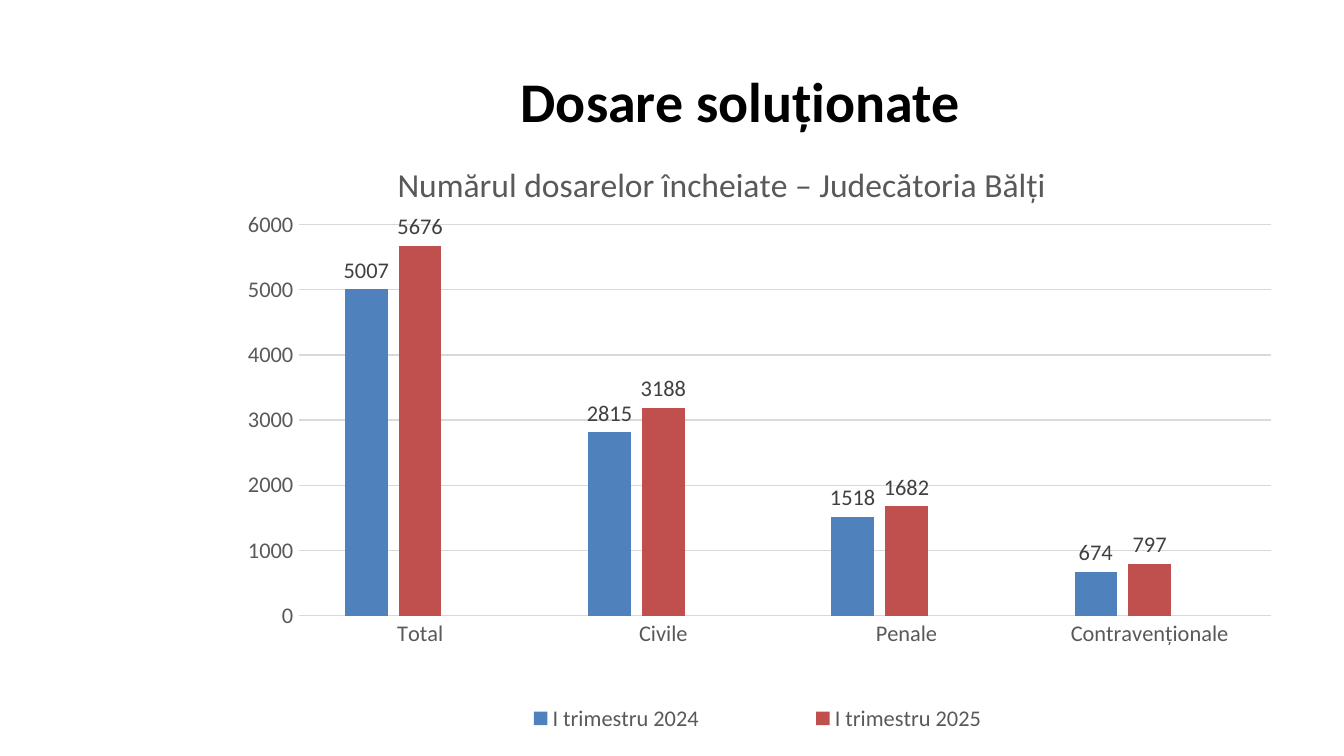
import pptx
import pptx.chart.data
import pptx.dml.color
import pptx.enum.chart
import pptx.enum.text
import pptx.oxml
import pptx.oxml.ns
import pptx.util

Pt = pptx.util.Pt
RGB = pptx.dml.color.RGBColor.from_string
enum = pptx.enum.chart
qn = pptx.oxml.ns.qn
space = pptx.oxml.ns.nsdecls("c")

theme = {
    "face": "Calibri",
    "head": (30, "000000"),
    "title": (18, "595959"),
    "axis": (12, "595959"),
    "label": (12, "404040"),
    "grid": "D9D9D9",
    "bars": ["4F81BD", "C0504D", "9BBB59"],
}


def style(font, role, bold=False):
    size, color = theme[role]
    font.name = theme["face"]
    font.size = Pt(size)
    font.bold = bold
    font.color.rgb = RGB(color)


def place(part, index, mode, **box):
    for old in part.findall(qn("c:layout")):
        part.remove(old)
    inner = '<c:layoutTarget val="inner"/>' if mode == "inner" else ""
    edges = "".join(f'<c:{side}Mode val="edge"/>' for side in "xy")
    sizes = "".join(f'<c:{key} val="{val}"/>' for key, val in box.items())
    part.insert(index, pptx.oxml.parse_xml(
        f"<c:layout {space}><c:manualLayout>{inner}{edges}{sizes}"
        "</c:manualLayout></c:layout>"))


deck = pptx.Presentation()
deck.slide_width = Pt(720)
deck.slide_height = Pt(405)
slide = deck.slides.add_slide(deck.slide_layouts[6])

head = slide.shapes.add_textbox(Pt(116), Pt(37.5), Pt(568), Pt(32.5))
frame = head.text_frame
frame.word_wrap = True
frame.vertical_anchor = pptx.enum.text.MSO_ANCHOR.MIDDLE
para = frame.paragraphs[0]
para.alignment = pptx.enum.text.PP_ALIGN.CENTER
run = para.add_run()
run.text = "Dosare soluționate "
style(run.font, "head", True)

data = pptx.chart.data.CategoryChartData()
data.categories = ["Total", "Civile", "Penale", "Contravenționale"]
data.add_series("I trimestru 2024", [5007, 2815, 1518, 674])
data.add_series("I trimestru 2025", [5676, 3188, 1682, 797])
data.add_series("Series 3", [None] * 4)
chart = slide.shapes.add_chart(
    enum.XL_CHART_TYPE.COLUMN_CLUSTERED,
    Pt(98.5), Pt(70), Pt(585.5), Pt(335), data).chart
chart.font.name = theme["face"]

chart.has_title = True
run = chart.chart_title.text_frame.paragraphs[0].add_run()
run.text = "Numărul dosarelor încheiate – Judecătoria Bălți"
style(run.font, "title")
chart.chart_title.include_in_layout = False

plot = chart.plots[0]
plot.gap_width = 219
plot.overlap = -27
plot.vary_by_categories = False
for series, color in zip(plot.series, theme["bars"]):
    series.format.fill.solid()
    series.format.fill.fore_color.rgb = RGB(color)
    labels = series.data_labels
    labels.show_value = True
    labels.position = enum.XL_LABEL_POSITION.OUTSIDE_END
    style(labels.font, "label")

cats, vals = chart.category_axis, chart.value_axis
vals.minimum_scale = 0
vals.maximum_scale = 6000
vals.major_unit = 1000
vals.has_major_gridlines = True
for axis in (cats, vals):
    axis.major_tick_mark = enum.XL_TICK_MARK.NONE
    axis.minor_tick_mark = enum.XL_TICK_MARK.NONE
    style(axis.tick_labels.font, "axis")
for line in (cats.format.line, vals.major_gridlines.format.line):
    line.color.rgb = RGB(theme["grid"])
    line.width = Pt(0.75)
vals.format.line.fill.background()

chart.has_legend = True
legend = chart.legend
legend.position = enum.XL_LEGEND_POSITION.BOTTOM
legend.include_in_layout = False
style(legend.font, "axis")
key = legend._element
key.insert(1, pptx.oxml.parse_xml(
    f'<c:legendEntry {space}><c:idx val="2"/><c:delete val="1"/></c:legendEntry>'))

area = chart._chartSpace.chart.plotArea
place(area, 0, "inner", x=0.105, y=0.15, w=0.89, h=0.626)
place(chart.chart_title._element, 1, "edge", x=0.19, y=0.04)
place(key, 2, "edge", x=0.22, y=0.9, w=0.61, h=0.08)

deck.save("out.pptx")
